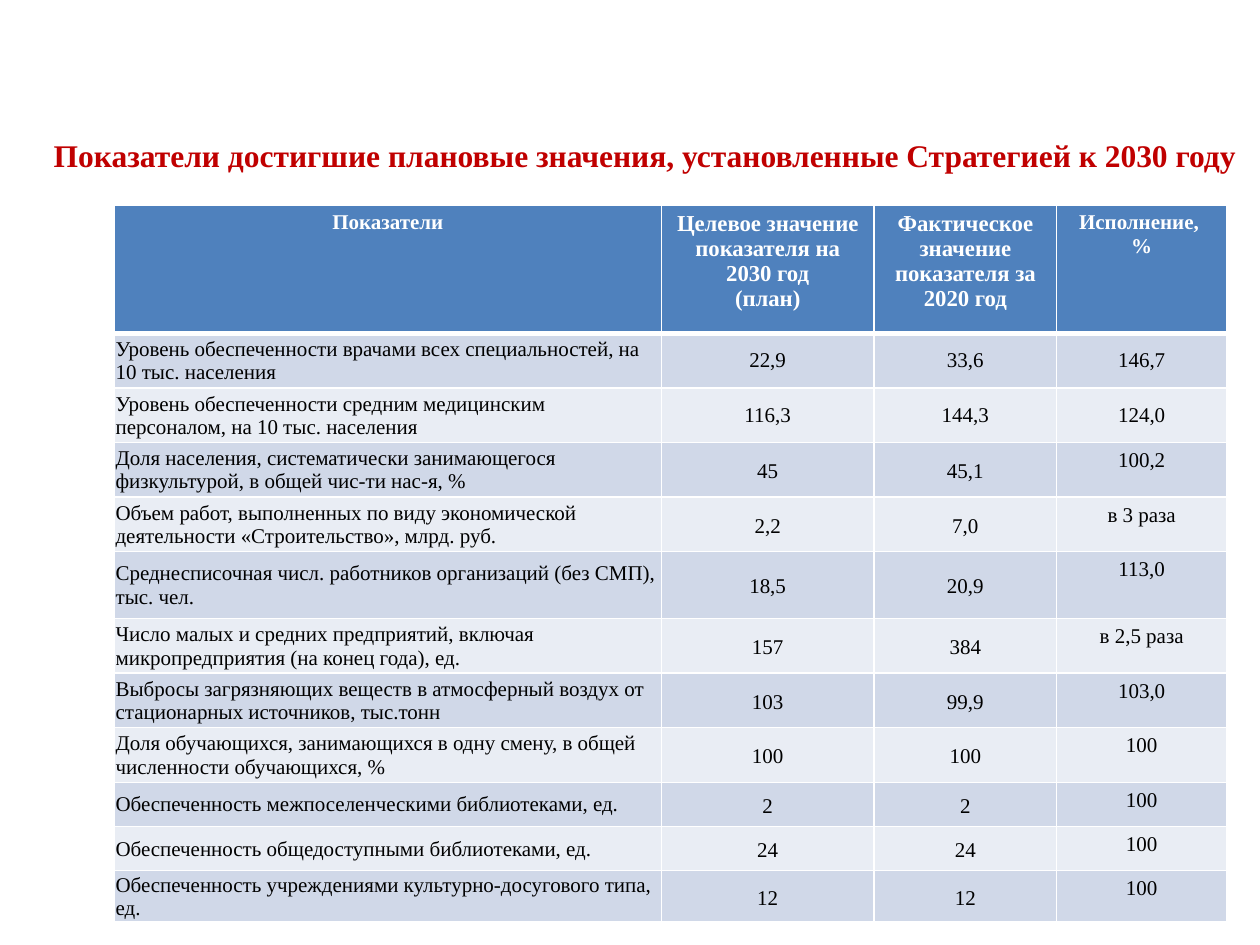
from lxml import etree
from pptx import Presentation
from pptx.dml.color import RGBColor
from pptx.enum.text import MSO_ANCHOR, MSO_AUTO_SIZE, PP_ALIGN
from pptx.oxml.ns import qn
from pptx.util import Cm, Pt

LEFT, CENTER = PP_ALIGN.LEFT, PP_ALIGN.CENTER
TOP, MIDDLE = MSO_ANCHOR.TOP, MSO_ANCHOR.MIDDLE
FIT = MSO_AUTO_SIZE.SHAPE_TO_FIT_TEXT

FONT = "Times New Roman"
RED = RGBColor(0xC0, 0x00, 0x00)
WHITE = RGBColor(0xFF, 0xFF, 0xFF)
BLACK = RGBColor(0x00, 0x00, 0x00)
BLUE = RGBColor(0x4F, 0x81, 0xBD)
DARK = RGBColor(0xD0, 0xD8, 0xE8)
LIGHT = RGBColor(0xE9, 0xED, 0xF4)

TITLE = "Показатели достигшие плановые значения, установленные Стратегией к 2030 году"
HEADS = [
    ("Показатели", 12),
    ("Целевое значение показателя на 2030 год\n(план)", 13),
    ("Фактическое значение показателя за 2020 год", 13),
    ("Исполнение, \n%", 12),
]
# name, plan, fact, result, row height in cm
ROWS = [
    ("Уровень обеспеченности врачами всех специальностей, на 10 тыс. населения",
     "22,9", "33,6", "146,7", 1.1),
    ("Уровень обеспеченности средним медицинским персоналом, на 10 тыс. населения",
     "116,3", "144,3", "124,0", 1.1),
    ("Доля населения, систематически занимающегося физкультурой, в общей чис-ти нас-я, %",
     "45", "45,1", "100,2", 1.1),
    ("Объем работ, выполненных по виду экономической деятельности «Строительство», млрд. руб.",
     "2,2", "7,0", "в 3 раза", 1.1),
    ("Среднесписочная числ. работников организаций (без СМП), тыс. чел.",
     "18,5", "20,9", "113,0", 1.35),
    ("Число малых и средних предприятий, включая микропредприятия (на конец года), ед.",
     "157", "384", "в 2,5 раза", 1.1),
    ("Выбросы загрязняющих веществ в атмосферный воздух от стационарных источников, тыс.тонн",
     "103", "99,9", "103,0", 1.1),
    ("Доля обучающихся, занимающихся в одну смену, в общей численности обучающихся, %",
     "100", "100", "100", 1.1),
    ("Обеспеченность межпоселенческими библиотеками, ед.", "2", "2", "100", 0.89),
    ("Обеспеченность общедоступными библиотеками, ед.", "24", "24", "100", 0.89),
    ("Обеспеченность учреждениями культурно-досугового типа, ед.", "12", "12", "100", 0.89),
]
COLS = [11.02, 4.29, 3.68, 3.43]
HEAD_ROW = 2.59
TIGHT = 2  # first data rows with single line spacing


def write(frame, text, size=12, color=BLACK, bold=False, align=CENTER, space=None):
    for i, line in enumerate(text.split("\n")):
        para = frame.paragraphs[0] if i == 0 else frame.add_paragraph()
        para.alignment = align
        if space:
            para.line_spacing = space
        run = para.add_run()
        run.text = line
        font = run.font
        font.name, font.size, font.bold = FONT, Pt(size), bold
        font.color.rgb = color


def paint(cell, fill, top=1, bottom=1):
    """Give the cell white borders, in points, and a fill."""
    props = cell._tc.get_or_add_tcPr()
    for side, width in (("L", 1), ("R", 1), ("T", top), ("B", bottom)):
        line = etree.SubElement(props, qn("a:ln" + side), w=str(Pt(width)))
        solid = etree.SubElement(line, qn("a:solidFill"))
        etree.SubElement(solid, qn("a:srgbClr"), val=str(WHITE))
    cell.fill.solid()
    cell.fill.fore_color.rgb = fill


def inset(cell, side, top=0.0):
    cell.margin_left = cell.margin_right = Cm(side)
    cell.margin_top, cell.margin_bottom = Cm(top), 0


def add_title(slide, x, y, w, h):
    frame = slide.shapes.add_textbox(Cm(x), Cm(y), Cm(w), Cm(h)).text_frame
    frame.word_wrap = True
    frame.auto_size = FIT
    write(frame, TITLE, size=18, color=RED, bold=True)


def fill_row(table, i, row):
    tight = i <= TIGHT
    for j, text in enumerate(row[:4]):
        cell = table.cell(i, j)
        paint(cell, DARK if i % 2 else LIGHT, top=3 if i == 1 else 1)
        cell.vertical_anchor = MIDDLE
        align, space = CENTER, None
        if j == 0:
            inset(cell, 0.02, 0.02)
            align = LEFT
        elif tight:
            inset(cell, 0.18)
        elif j < 3:
            inset(cell, 0.1)
            space = 1.15
        else:
            cell.vertical_anchor = TOP
        write(cell.text_frame, text, align=align, space=space)


def add_grid(slide, x, y):
    highs = [HEAD_ROW] + [row[4] for row in ROWS]
    table = slide.shapes.add_table(len(highs), len(COLS), Cm(x), Cm(y),
                                   Cm(sum(COLS)), Cm(sum(highs))).table
    for col, width in zip(table.columns, COLS):
        col.width = Cm(width)
    for line, high in zip(table.rows, highs):
        line.height = Cm(high)
    for j, (text, size) in enumerate(HEADS):
        cell = table.cell(0, j)
        paint(cell, BLUE, bottom=3)
        write(cell.text_frame, text, size=size, color=WHITE, bold=True)
    for i, row in enumerate(ROWS, 1):
        fill_row(table, i, row)


def main():
    deck = Presentation()
    deck.slide_width, deck.slide_height = Cm(25.4), Cm(19.05)
    slide = deck.slides.add_slide(deck.slide_layouts[6])
    add_title(slide, 0.71, 2.62, 24.59, 1.02)
    add_grid(slide, 2.31, 4.13)
    deck.save("out.pptx")


if __name__ == "__main__":
    main()
